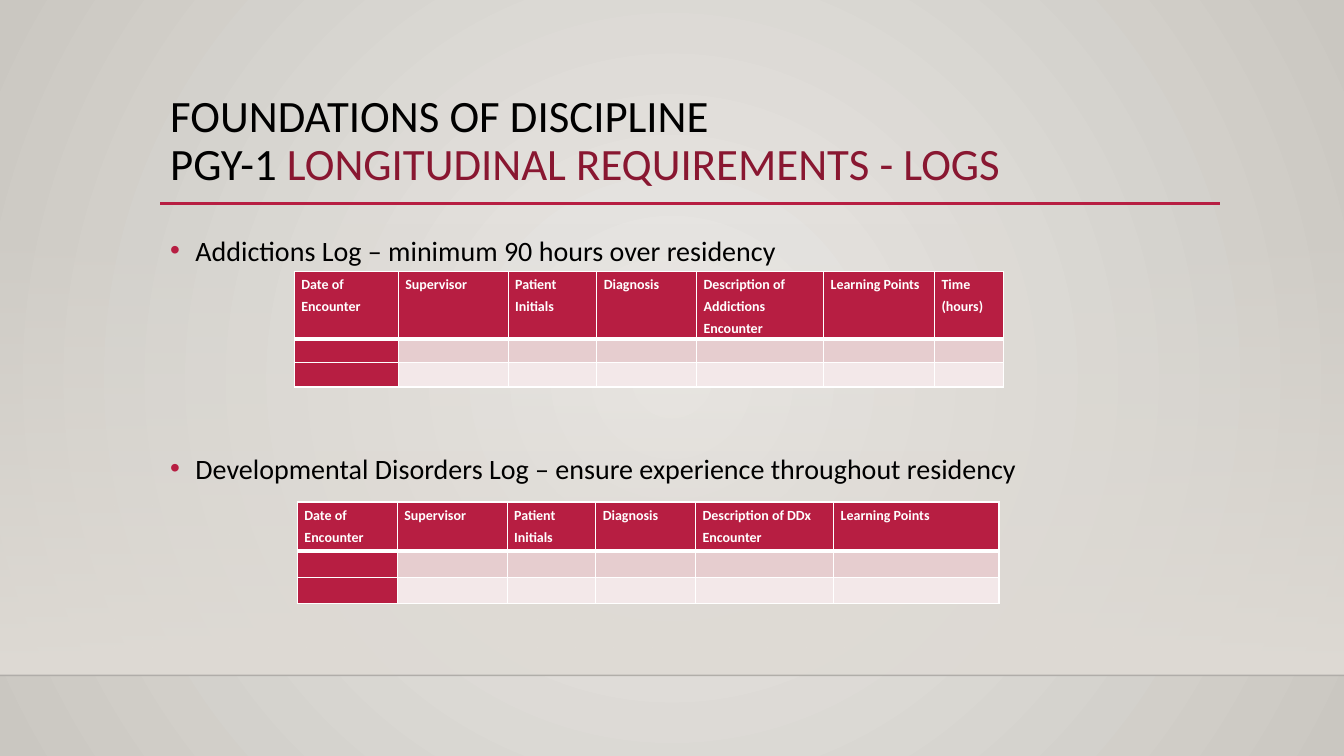
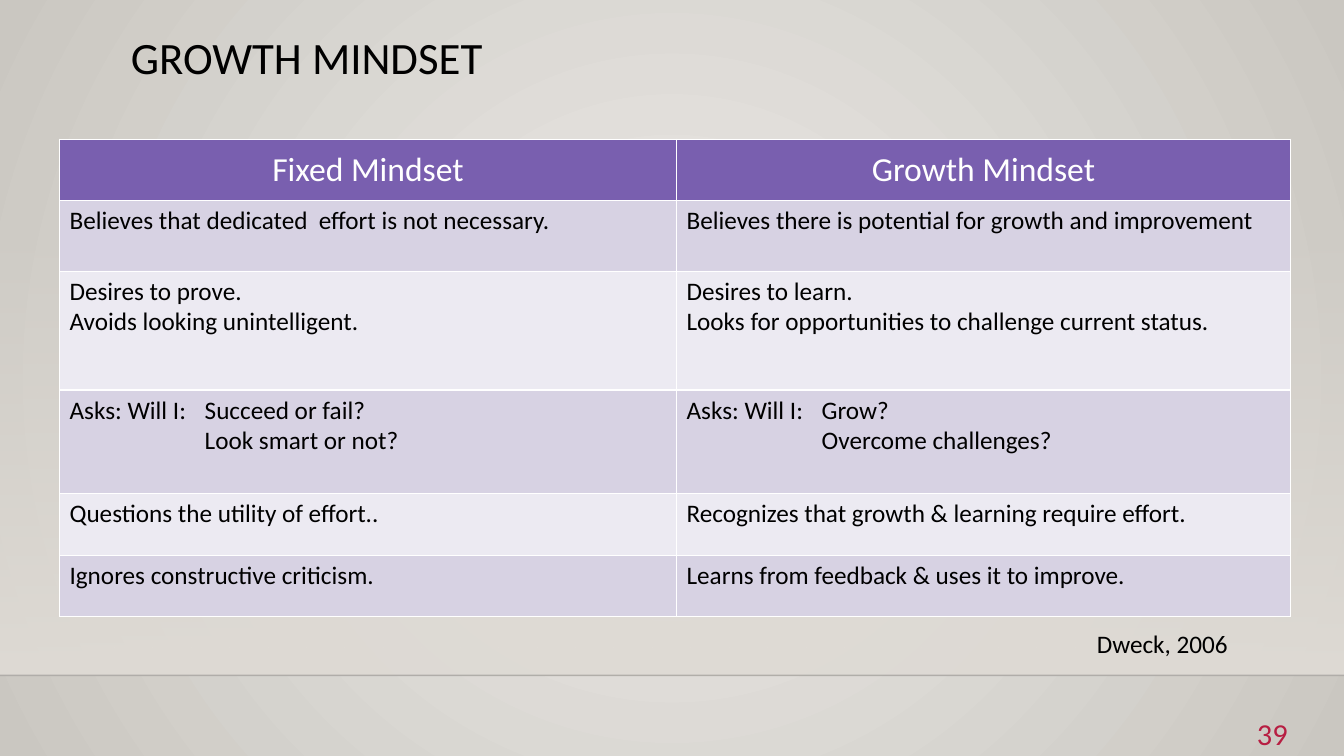
from lxml import etree
from pptx import Presentation
from pptx.dml.color import RGBColor
from pptx.enum.shapes import MSO_CONNECTOR, MSO_SHAPE
from pptx.enum.text import MSO_ANCHOR, PP_ALIGN
from pptx.oxml import parse_xml
from pptx.oxml.ns import nsdecls, qn
from pptx.util import Inches, Pt

LINE, RECT = MSO_CONNECTOR.STRAIGHT, MSO_SHAPE.RECTANGLE
MIDDLE = MSO_ANCHOR.MIDDLE
CENTER, RIGHT = PP_ALIGN.CENTER, PP_ALIGN.RIGHT

FONT = "Calibri"
WIDE, HIGH = 13.33, 7.5
FLOOR = 6.7
BLACK = RGBColor(0x00, 0x00, 0x00)
INK = RGBColor(0x00, 0x00, 0x01)
WHITE = RGBColor(0xFF, 0xFF, 0xFF)
LIGHT = RGBColor(0xEC, 0xEA, 0xE7)
SHADE = RGBColor(0xCA, 0xC7, 0xC1)
SAND = RGBColor(0xDF, 0xDB, 0xD5)
RED = RGBColor(0xB7, 0x1E, 0x42)
WINE = RGBColor(0x89, 0x17, 0x31)
ROSE = RGBColor(0xE6, 0xCD, 0xCF)
BLUSH = RGBColor(0xF3, 0xE8, 0xE9)
PURPLE = RGBColor(0x79, 0x5F, 0xAF)
LILAC = RGBColor(0xD7, 0xD2, 0xE3)
MIST = RGBColor(0xEC, 0xEA, 0xF2)

RADIAL = ('<a:path path="circle"><a:fillToRect l="50000" t="50000" '
          'r="50000" b="50000"/></a:path>')
DOWN = '<a:lin ang="5400000" scaled="0"/>'


def apply(item, values):
    for name, value in values.items():
        setattr(item, name, value)


def blend(node, first, last, way, alpha=100):
    """Replace a solid fill with a gradient; alpha is that of the first stop."""
    node.getparent().replace(node, parse_xml(
        f'<a:gradFill {nsdecls("a")} rotWithShape="1"><a:gsLst>'
        f'<a:gs pos="0"><a:srgbClr val="{first}">'
        f'<a:alpha val="{alpha * 1000}"/></a:srgbClr></a:gs>'
        f'<a:gs pos="100000"><a:srgbClr val="{last}"/></a:gs>'
        f'</a:gsLst>{way}</a:gradFill>'))


def edge(cell, base):
    """Draw white cell borders, with the bottom one base points wide."""
    props = cell._tc.get_or_add_tcPr()
    for spot, (side, size) in enumerate(zip("LRTB", (1, 1, 1, base))):
        props.insert(spot, parse_xml(
            f'<a:ln{side} {nsdecls("a")} w="{Pt(size)}"><a:solidFill>'
            f'<a:srgbClr val="{WHITE}"/></a:solidFill></a:ln{side}>'))


class Deck:
    def __init__(self):
        self.show = Presentation()
        apply(self.show, {"slide_width": Inches(WIDE),
                          "slide_height": Inches(HIGH)})
        self.slide = None

    def start(self):
        """Add a slide with the shared background, band and floor line."""
        self.slide = self.show.slides.add_slide(self.show.slide_layouts[6])
        self.slide.background.fill.solid()
        node = self.slide._element.xpath(".//p:bg//a:solidFill")[0]
        blend(node, LIGHT, SHADE, RADIAL)
        band = self.slide.shapes.add_shape(
            RECT, 0, Inches(2.21), Inches(WIDE), Inches(FLOOR - 2.21))
        band.shadow.inherit = False
        band.fill.solid()
        blend(band._element.xpath(".//a:solidFill")[0], SAND, SAND, DOWN, 0)
        band.line.fill.background()
        self.rule(0, WIDE, FLOOR, INK, 1, 20)

    def rule(self, left, right, top, color, size, alpha=100):
        line = self.slide.shapes.add_connector(
            LINE, Inches(left), Inches(top), Inches(right), Inches(top))
        line.line.color.rgb = color
        line.line.width = Pt(size)
        node = line._element.xpath(".//a:ln//a:srgbClr")[0]
        etree.SubElement(node, qn("a:alpha"), val=str(alpha * 1000))
        etree.SubElement(line._element.spPr, qn("a:effectLst"))

    def run(self, para, text, size, color=BLACK, bold=False):
        run = para.add_run()
        run.text = text
        apply(run.font, {"name": FONT, "size": Pt(size), "bold": bold})
        run.font.color.rgb = color

    def box(self, left, top, width, height):
        frame = self.slide.shapes.add_textbox(
            *map(Inches, (left, top, width, height))).text_frame
        frame.word_wrap = True
        return frame

    def label(self, place, text, size, color=BLACK, align=None):
        para = self.box(*place).paragraphs[0]
        para.alignment = align
        self.run(para, text, size, color)

    def title(self, place, *lines):
        """Write lines, each a list of (text, color) parts."""
        para = self.box(*place).paragraphs[0]
        para.line_spacing = 0.9
        for row, parts in enumerate(lines):
            if row:
                para.add_line_break()
            for text, color in parts:
                self.run(para, text, 32, color)

    def points(self, place, items, gap):
        frame = self.box(*place)
        for row, text in enumerate(items):
            para = frame.add_paragraph() if row else frame.paragraphs[0]
            apply(para, {"line_spacing": 1.2,
                         "space_before": Pt(gap if row else 0)})
            props = para._p.get_or_add_pPr()
            apply_indent = {"marL": Inches(0.25), "indent": Inches(-0.25)}
            for name, value in apply_indent.items():
                props.set(name, str(value))
            tint = etree.SubElement(props, qn("a:buClr"))
            etree.SubElement(tint, qn("a:srgbClr"), val=str(RED))
            etree.SubElement(props, qn("a:buFont"), typeface="Arial")
            etree.SubElement(props, qn("a:buChar"), char="•")
            self.run(para, text, 20)

    def table(self, left, top, cols, rows, data, style):
        """Fill a grid; style(row, col) gives the format of each cell."""
        grid = self.slide.shapes.add_table(
            len(rows), len(cols), Inches(left), Inches(top),
            Inches(sum(cols)), Inches(sum(rows))).table
        apply(grid, {"first_row": False, "horz_banding": False})
        for col, width in zip(grid.columns, cols):
            col.width = Inches(width)
        for row, height in zip(grid.rows, rows):
            row.height = Inches(height)
        for r, texts in enumerate(data):
            for c, text in enumerate(texts):
                self.cell(grid.cell(r, c), text, **style(r, c))

    def cell(self, cell, text, fill, font, pad, base=1, para=None,
             anchor=None, tab=None):
        side, end = map(Inches, pad)
        apply(cell, {"margin_left": side, "margin_right": side,
                     "margin_top": end, "margin_bottom": end,
                     "vertical_anchor": anchor})
        cell.fill.solid()
        cell.fill.fore_color.rgb = fill
        edge(cell, base)
        frame = cell.text_frame
        for row, line in enumerate(text.split("\n")):
            item = frame.add_paragraph() if row else frame.paragraphs[0]
            apply(item, para or {})
            if "\t" in line:
                stops = etree.SubElement(item._p.get_or_add_pPr(),
                                         qn("a:tabLst"))
                etree.SubElement(stops, qn("a:tab"), pos=str(Inches(tab)),
                                 algn="l")
            if line:
                self.run(item, line, **font)
            else:
                etree.SubElement(item._p, qn("a:endParaRPr"),
                                 sz=str(font["size"] * 100))


def log_style(row, col):
    return {"fill": RED if row == 0 or col == 0 else (ROSE, BLUSH)[row - 1],
            "font": {"size": 10, "color": WHITE, "bold": True},
            "pad": (0.07, 0), "base": 1 if row else 3,
            "para": {"line_spacing": 1.3}}


def mind_style(row, col):
    style = {"pad": (0.1, 0.05), "tab": 1.34}
    if row == 0:
        return style | {"fill": PURPLE, "font": {"size": 24, "color": WHITE},
                        "para": {"alignment": CENTER}, "anchor": MIDDLE}
    return style | {"fill": LILAC if row % 2 else MIST, "font": {"size": 18}}


def log(deck, left, top, cols, rows, heads):
    blank = [""] * len(heads)
    deck.table(left, top, cols, rows, [heads, blank, blank], log_style)


def logs(deck):
    deck.start()
    deck.rule(1.59, 12.1, 2.02, RED, 2.5)
    deck.title((1.59, 0.88, 10.5, 1.15),
               [("FOUNDATIONS OF DISCIPLINE", BLACK)],
               [("PGY-1 ", BLACK),
                ("LONGITUDINAL REQUIREMENTS - LOGS", WINE)])
    deck.points((1.59, 2.2, 10.5, 3.77), [
        "Addictions Log – minimum 90 hours over residency",
        "Developmental Disorders Log – ensure experience throughout residency",
    ], 127)
    heads = ["Date of Encounter", "Supervisor", "Patient Initials",
             "Diagnosis"]
    log(deck, 2.92, 2.69, [1.03, 1.09, 0.88, 0.99, 1.26, 1.1, 0.68],
        [0.67, 0.24, 0.24],
        heads + ["Description of Addictions Encounter", "Learning Points",
                 "Time (hours)"])
    log(deck, 2.95, 4.98, [0.99, 1.09, 0.88, 0.99, 1.37, 1.64],
        [0.49, 0.26, 0.26],
        heads + ["Description of DDx Encounter", "Learning Points"])


def mindset(deck):
    deck.start()
    deck.title((1.2, 0.31, 11, 1.59), [("GROWTH MINDSET", BLACK)])
    deck.label((12.02, 7.05, 0.85, 0.4), "39", 21.7, RED, RIGHT)
    deck.label((10.78, 6.18, 1.67, 0.4), "Dweck, 2006", 18)
    deck.table(0.59, 1.38, [6.12, 6.09], [0.61, 0.7, 1.18, 1.03, 0.61, 0.61], [
        ("Fixed Mindset", "Growth Mindset"),
        ("Believes that dedicated  effort is not necessary.",
         "Believes there is potential for growth and improvement"),
        ("Desires to prove.\nAvoids looking unintelligent.",
         "Desires to learn.\n"
         "Looks for opportunities to challenge current status."),
        ("Asks: Will I:\tSucceed or fail?\n\tLook smart or not?",
         "Asks: Will I:\tGrow?\n\tOvercome challenges?"),
        ("Questions the utility of effort..",
         "Recognizes that growth & learning require effort."),
        ("Ignores constructive criticism.",
         "Learns from feedback & uses it to improve."),
    ], mind_style)


def main():
    deck = Deck()
    logs(deck)
    mindset(deck)
    deck.show.save("out.pptx")


if __name__ == "__main__":
    main()
